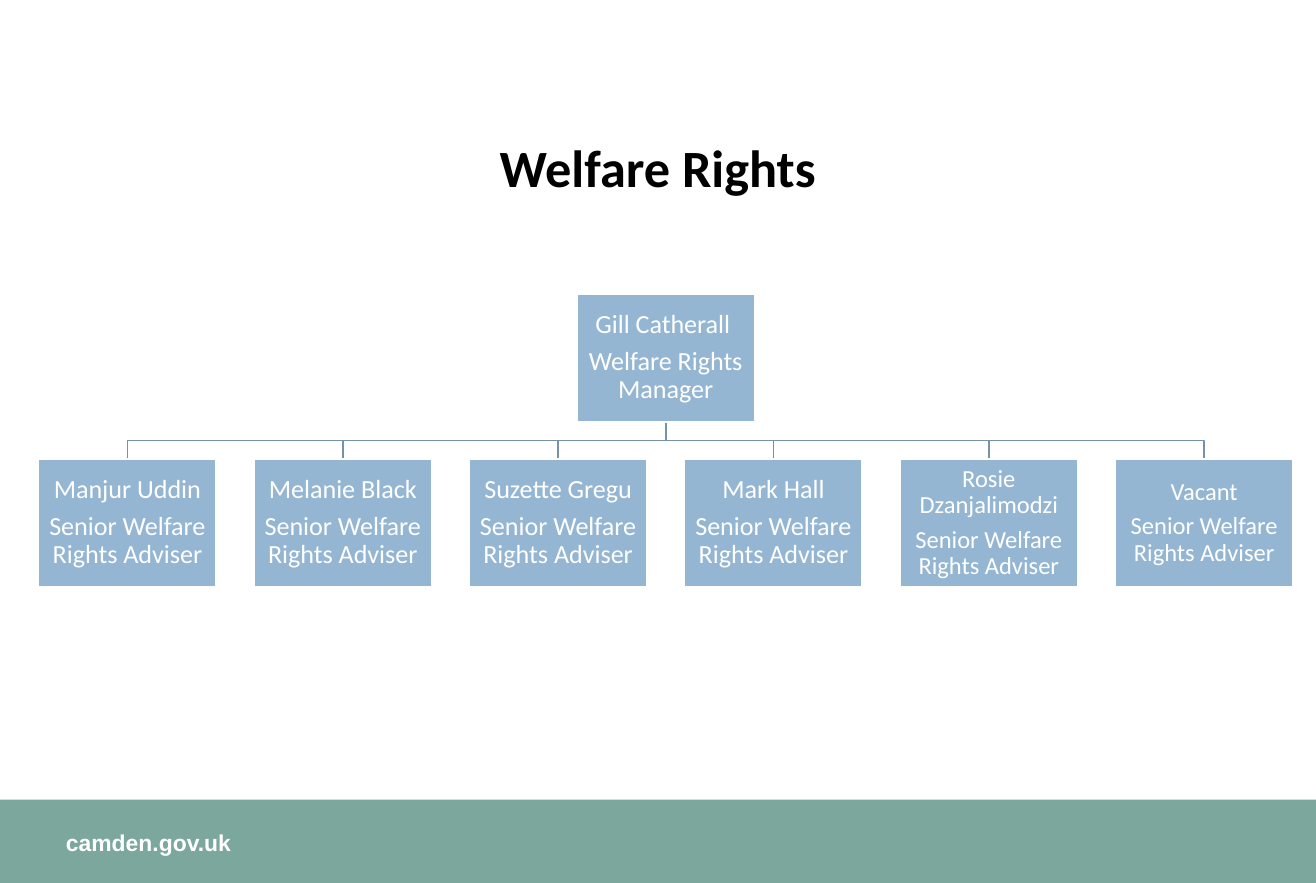
from dataclasses import dataclass

from pptx import Presentation
from pptx.dml.color import RGBColor
from pptx.enum.shapes import MSO_SHAPE
from pptx.enum.text import MSO_ANCHOR, PP_ALIGN
from pptx.util import Pt


@dataclass(frozen=True)
class Theme:
    heading_font: str = "Calibri"
    footer_font: str = "Arial"
    title_size: float = 32
    box_size: float = 16
    small_box_size: float = 15
    footer_size: float = 14
    black: RGBColor = RGBColor(0x00, 0x00, 0x00)
    white: RGBColor = RGBColor(0xFF, 0xFF, 0xFF)
    box_fill: RGBColor = RGBColor(0x94, 0xB6, 0xD2)
    connector: RGBColor = RGBColor(0x77, 0x92, 0xA8)
    footer_fill: RGBColor = RGBColor(0x7B, 0xA7, 0x9D)


THEME = Theme()
SLIDE_WIDTH, SLIDE_HEIGHT = 805, 540
BOX_WIDTH, BOX_HEIGHT = 108.7, 78.3
MANAGER_LEFT, MANAGER_TOP = 352.9, 179.8
TEAM_LEFT, TEAM_TOP, TEAM_STEP = 23.6, 280.7, 131.73

ADVISER = "Senior Welfare Rights Adviser"
TEAM = [
    ("Manjur Uddin", THEME.box_size),
    ("Melanie Black", THEME.box_size),
    ("Suzette Gregu", THEME.box_size),
    ("Mark Hall", THEME.box_size),
    ("Rosie Dzanjalimodzi", THEME.small_box_size),
    ("Vacant", THEME.small_box_size),
]


def style_font(para, name, size, color, bold=False):
    font = para.font
    font.name = name
    font.size = Pt(size)
    font.bold = bold
    font.color.rgb = color


def set_margins(frame, left, top, right, bottom):
    frame.margin_left, frame.margin_top = Pt(left), Pt(top)
    frame.margin_right, frame.margin_bottom = Pt(right), Pt(bottom)


def add_rectangle(slide, left, top, width, height, fill):
    box = slide.shapes.add_shape(
        MSO_SHAPE.RECTANGLE, Pt(left), Pt(top), Pt(width), Pt(height))
    box.shadow.inherit = False
    box.fill.solid()
    box.fill.fore_color.rgb = fill
    box.line.fill.background()
    return box


def add_footer(slide):
    add_rectangle(slide, 0, 489, SLIDE_WIDTH, 51, THEME.footer_fill)
    box = slide.shapes.add_textbox(Pt(40.3), Pt(507), Pt(332), Pt(17))
    frame = box.text_frame
    frame.word_wrap = True
    set_margins(frame, 0, 0, 7.2, 0)
    frame.text = "camden.gov.uk"
    style_font(frame.paragraphs[0], THEME.footer_font, THEME.footer_size,
               THEME.white, bold=True)


def set_title(slide, text):
    title = slide.shapes.title
    title.left, title.top = Pt(55.4), Pt(74.2)
    title.width, title.height = Pt(694), Pt(59.8)
    frame = title.text_frame
    frame.text = text
    frame.vertical_anchor = MSO_ANCHOR.MIDDLE
    para = frame.paragraphs[0]
    para.alignment = PP_ALIGN.CENTER
    para.line_spacing = 0.9
    style_font(para, THEME.heading_font, THEME.title_size, THEME.black, bold=True)


def add_person(slide, left, top, name, role, size):
    box = add_rectangle(slide, left, top, BOX_WIDTH, BOX_HEIGHT, THEME.box_fill)
    box.line.color.rgb = THEME.white
    box.line.width = Pt(1)
    frame = box.text_frame
    frame.word_wrap = True
    frame.vertical_anchor = MSO_ANCHOR.MIDDLE
    set_margins(frame, 0.8, 0.8, 0.8, 0.8)
    frame.text = f"{name}\n{role}"
    for para in frame.paragraphs:
        para.alignment = PP_ALIGN.CENTER
        para.line_spacing = 0.9
        para.space_after = Pt(0.33 * size)
        style_font(para, THEME.heading_font, size, THEME.white)


def add_branch(slide, start_x, start_y, end_x, end_y):
    middle_y = (start_y + end_y) / 2
    builder = slide.shapes.build_freeform(Pt(start_x), Pt(start_y))
    builder.add_line_segments(
        [(Pt(start_x), Pt(middle_y)), (Pt(end_x), Pt(middle_y)),
         (Pt(end_x), Pt(end_y))], close=False)
    branch = builder.convert_to_shape()
    branch.shadow.inherit = False
    branch.fill.background()
    branch.line.color.rgb = THEME.connector
    branch.line.width = Pt(1)


def add_organisation_chart(slide):
    half_width = BOX_WIDTH / 2
    team_lefts = [TEAM_LEFT + index * TEAM_STEP for index in range(len(TEAM))]
    for left in reversed(team_lefts):
        add_branch(slide, MANAGER_LEFT + half_width, MANAGER_TOP + BOX_HEIGHT,
                   left + half_width, TEAM_TOP)
    add_person(slide, MANAGER_LEFT, MANAGER_TOP, "Gill Catherall ",
               "Welfare Rights Manager", THEME.box_size)
    for left, (name, size) in zip(team_lefts, TEAM):
        add_person(slide, left, TEAM_TOP, name, ADVISER, size)


def main():
    deck = Presentation()
    deck.slide_width, deck.slide_height = Pt(SLIDE_WIDTH), Pt(SLIDE_HEIGHT)
    slide = deck.slides.add_slide(deck.slide_layouts.get_by_name("Title Only"))
    add_footer(slide)
    set_title(slide, "Welfare Rights")
    add_organisation_chart(slide)
    deck.save("out.pptx")


if __name__ == "__main__":
    main()
